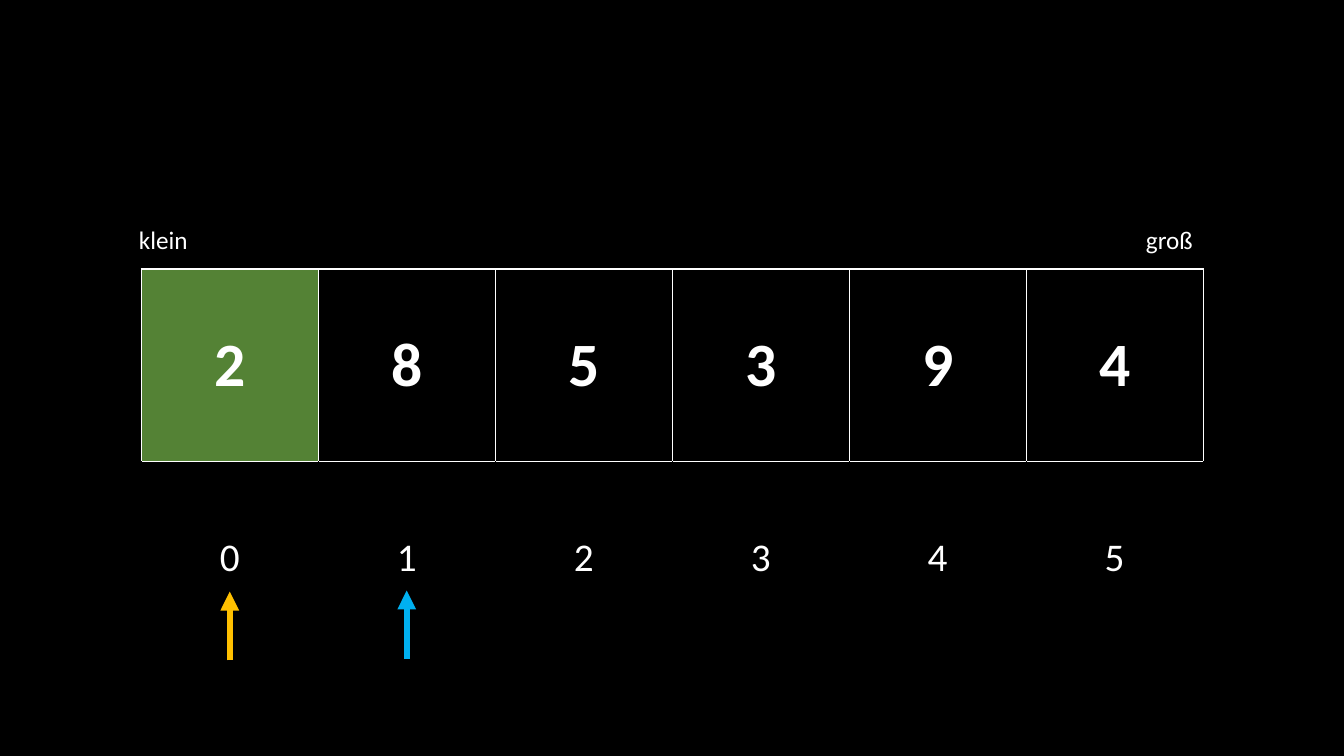
"""Build the sorting slide: an array of numbers with two index pointers."""
from dataclasses import dataclass

from lxml.etree import SubElement
from pptx import Presentation
from pptx.dml.color import RGBColor
from pptx.enum.shapes import MSO_CONNECTOR
from pptx.enum.text import MSO_ANCHOR, PP_ALIGN
from pptx.oxml.ns import qn
from pptx.slide import Slide
from pptx.table import _Cell
from pptx.text.text import TextFrame
from pptx.util import Cm, Pt

BLACK, WHITE, GREEN = "000000", "FFFFFF", "548235"
LEFT, TOP, COL_W, ROW_H = 3.56, 6.78, 4.46, 4.85
VALUES = [2, 8, 5, 3, 9, 4]
SORTED_COUNT = 1


@dataclass
class Label:
    """A caption above the array."""
    text: str
    left: float
    align: PP_ALIGN


@dataclass
class Pointer:
    """An upward arrow below an array index."""
    index: int
    top: float
    color: str


LABELS = [
    Label("groß", 26.47, PP_ALIGN.RIGHT),
    Label("klein", 3.25, PP_ALIGN.LEFT),
]
POINTERS = [Pointer(1, 14.88, "00B0F0"), Pointer(0, 14.91, "FFC000")]


def rgb(color: str) -> RGBColor:
    """Turn a hex string into a colour."""
    return RGBColor.from_string(color)


def write(tf: TextFrame, text: str, *, size: float, bold: bool = False,
          align: PP_ALIGN = PP_ALIGN.CENTER, color: str = WHITE) -> None:
    """Write one formatted line into a text frame."""
    p = tf.paragraphs[0]
    p.alignment = align
    r = p.add_run()
    r.text = text
    r.font.name = "Calibri"
    r.font.size = Pt(size)
    r.font.bold = bold
    r.font.color.rgb = rgb(color)


def set_borders(cell: _Cell, side_color: str, top: str, bottom: str) -> None:
    """Give a cell its four one-point borders."""
    tc_pr = cell._tc.get_or_add_tcPr()
    colors = {"lnL": side_color, "lnR": side_color, "lnT": top, "lnB": bottom}
    for tag, color in colors.items():
        ln = SubElement(tc_pr, qn(f"a:{tag}"), w=str(Pt(1)))
        fill = SubElement(ln, qn("a:solidFill"))
        SubElement(fill, qn("a:srgbClr"), val=color)


def add_array(s: Slide) -> None:
    """Draw the values in a framed row above their indices."""
    n = len(VALUES)
    table = s.shapes.add_table(2, n, Cm(LEFT), Cm(TOP),
                               Cm(n * COL_W), Cm(2 * ROW_H)).table
    for row in table.rows:
        row.height = Cm(ROW_H)
    for i, value in enumerate(VALUES):
        table.columns[i].width = Cm(COL_W)
        value_cell, index_cell = table.cell(0, i), table.cell(1, i)
        set_borders(value_cell, WHITE, WHITE, WHITE)
        set_borders(index_cell, BLACK, WHITE, BLACK)
        for cell in (value_cell, index_cell):
            cell.vertical_anchor = MSO_ANCHOR.MIDDLE
            cell.fill.background()
        if i < SORTED_COUNT:
            value_cell.fill.solid()
            value_cell.fill.fore_color.rgb = rgb(GREEN)
        write(value_cell.text_frame, str(value), size=44, bold=True)
        write(index_cell.text_frame, str(i), size=28)


def add_label(s: Slide, label: Label) -> None:
    """Place a caption above the array."""
    sp = s.shapes.add_textbox(Cm(label.left), Cm(5.54), Cm(3.84), Cm(1.02))
    sp.text_frame.word_wrap = True
    write(sp.text_frame, label.text, size=18, align=label.align)


def add_pointer(s: Slide, pointer: Pointer) -> None:
    """Draw an arrow pointing up at an index."""
    x = Cm(LEFT + (pointer.index + 0.5) * COL_W)
    sp = s.shapes.add_connector(MSO_CONNECTOR.STRAIGHT, x,
                                Cm(pointer.top + 1.73), x, Cm(pointer.top))
    sp.line.width = Pt(4.5)
    sp.line.color.rgb = rgb(pointer.color)
    SubElement(sp.line._get_or_add_ln(), qn("a:tailEnd"), type="triangle")
    SubElement(sp._element.spPr, qn("a:effectLst"))


def main() -> None:
    """Build and save the presentation."""
    prs = Presentation()
    prs.slide_width, prs.slide_height = Cm(33.87), Cm(19.05)
    s = prs.slides.add_slide(prs.slide_layouts[6])
    s.background.fill.solid()
    s.background.fill.fore_color.rgb = rgb(BLACK)
    add_array(s)
    for label in LABELS:
        add_label(s, label)
    for pointer in POINTERS:
        add_pointer(s, pointer)
    prs.save("out.pptx")


if __name__ == "__main__":
    main()
